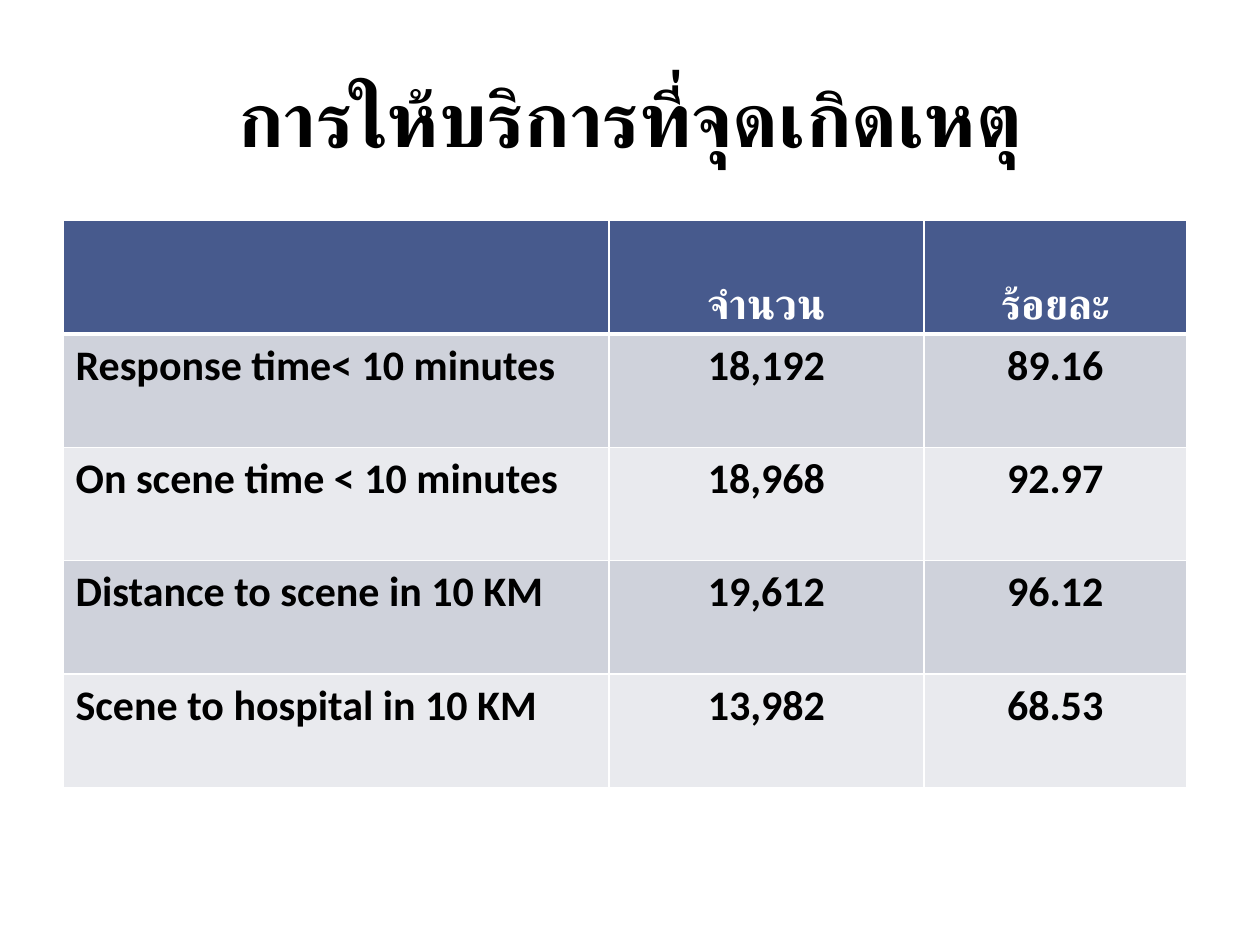
from dataclasses import dataclass

from lxml.etree import SubElement
from pptx import Presentation
from pptx.dml.color import RGBColor as Color
from pptx.enum.text import MSO_ANCHOR as Anchor, PP_ALIGN as Align
from pptx.oxml.ns import qn
from pptx.util import Pt


@dataclass(frozen=True)
class Theme:
    """Colours, font and type sizes of the deck."""
    font: str = "Calibri"
    ink: str = "000000"
    paper: str = "FFFFFF"
    header: str = "475A8D"
    bands: tuple = ("CFD2DB", "E9EAEE")
    title_size: int = 44
    table_size: int = 24
    line: int = 1
    header_line: int = 3


class Page:
    """Puts styled elements on one slide."""

    def __init__(self, deck, theme):
        """Add a title-only slide to the deck."""
        self.theme = theme
        self.slide = deck.slides.add_slide(deck.slide_layouts[5])

    def add_text(self, frame, text, size, color, align):
        """Put one bold paragraph into a text frame."""
        para = frame.paragraphs[0]
        para.alignment = align
        span = para.add_run()
        span.text = text
        span.font.name = self.theme.font
        span.font.size = Pt(size)
        span.font.bold = True
        span.font.color.rgb = Color.from_string(color)

    def add_title(self, text, left, top, width, height):
        """Place and fill the title placeholder."""
        box = self.slide.shapes.title
        box.left, box.top, box.width, box.height = map(Pt, (left, top, width, height))
        box.text_frame.vertical_anchor = Anchor.MIDDLE
        self.add_text(box.text_frame, text, self.theme.title_size, self.theme.ink, Align.CENTER)

    def add_borders(self, cell, widths):
        """Draw the cell edges with the given widths."""
        properties = cell._tc.get_or_add_tcPr()
        for side, width in widths.items():
            edge = SubElement(properties, qn(f"a:ln{side}"), w=str(Pt(width)))
            fill = SubElement(edge, qn("a:solidFill"))
            SubElement(fill, qn("a:srgbClr"), val=self.theme.paper)

    def add_table(self, rows, left, top, widths, row_height):
        """Add a table with a header row and banded body rows."""
        theme = self.theme
        frame = self.slide.shapes.add_table(
            len(rows), len(widths), Pt(left), Pt(top),
            Pt(sum(widths)), Pt(row_height * len(rows)))
        grid = frame.table
        for column, width in zip(grid.columns, widths):
            column.width = Pt(width)
        for r, values in enumerate(rows):
            grid.rows[r].height = Pt(row_height)
            is_header = r == 0
            fill = theme.header if is_header else theme.bands[(r - 1) % 2]
            color = theme.paper if is_header else theme.ink
            top_line = theme.header_line if r == 1 else theme.line
            bottom_line = theme.header_line if is_header else theme.line
            for c, value in enumerate(values):
                cell = grid.cell(r, c)
                self.add_borders(cell, {"L": theme.line, "R": theme.line,
                                        "T": top_line, "B": bottom_line})
                cell.fill.solid()
                cell.fill.fore_color.rgb = Color.from_string(fill)
                cell.vertical_anchor = Anchor.BOTTOM if is_header else Anchor.TOP
                if value:
                    align = Align.CENTER if c else Align.LEFT
                    self.add_text(cell.text_frame, value, theme.table_size, color, align)


def main():
    """Build the on-scene service slide."""
    deck = Presentation()
    deck.slide_width, deck.slide_height = Pt(720), Pt(540)
    page = Page(deck, Theme())
    page.add_title("การให้บริการที่จุดเกิดเหตุ", 36, 21.6, 648, 90)
    services = [
        ("", "จำนวน", "ร้อยละ"),
        ("Response time< 10 minutes", "18,192", "89.16"),
        ("On scene time < 10 minutes", "18,968", "92.97"),
        ("Distance to scene in 10 KM", "19,612", "96.12"),
        ("Scene to hospital in 10 KM", "13,982", "68.53"),
    ]
    page.add_table(services, 36, 126, (312, 180, 150), 64.8)
    deck.save("out.pptx")


if __name__ == "__main__":
    main()
